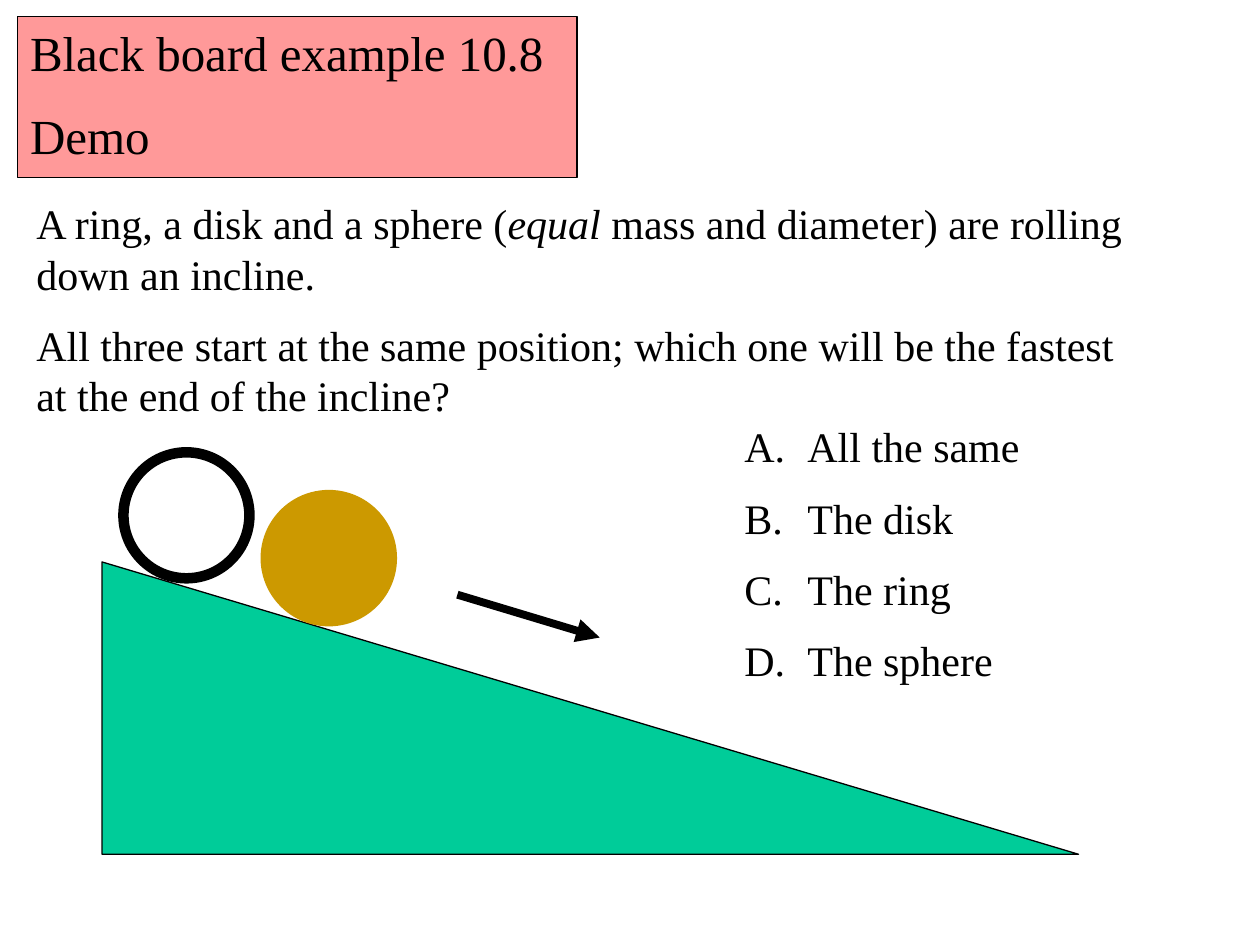
from lxml import etree
from pptx import Presentation
from pptx import util as u
from pptx.dml.color import RGBColor
from pptx.enum import shapes, text
from pptx.oxml.ns import qn

THEME = {
    "font": "Times New Roman",
    "title_size": 28,
    "body_size": 24,
    "ink": RGBColor.from_string("000000"),
    "banner": RGBColor.from_string("FF9999"),
    "incline": RGBColor.from_string("00CC99"),
    "disk": RGBColor.from_string("CC9900"),
}

deck = Presentation()
deck.slide_width, deck.slide_height = u.Inches(10), u.Inches(7.5)
slide = deck.slides.add_slide(deck.slide_layouts[6])

# The slide is a grid of 100 columns by 75 rows of square cells.
CELL = deck.slide_width / 100


def grid(*cells):
    """Turn columns and rows into slide lengths."""
    return [round(cell * CELL) for cell in cells]


def write(frame, lines, size, lettered=False):
    """Fill a frame; each line is a list of (words, italic) runs."""
    frame.word_wrap = True
    frame.auto_size = text.MSO_AUTO_SIZE.SHAPE_TO_FIT_TEXT
    for index, runs in enumerate(lines):
        line = frame.paragraphs[0] if index == 0 else frame.add_paragraph()
        line.alignment = text.PP_ALIGN.LEFT
        if index:
            line.space_before = u.Pt(size / 2)
        if lettered:
            props = line._p.get_or_add_pPr()
            indent = u.Inches(0.5)
            props.set("marL", str(indent))
            props.set("indent", str(-indent))
            etree.SubElement(props, qn("a:buFont"), typeface="+mj-lt")
            etree.SubElement(props, qn("a:buAutoNum"), type="alphaUcPeriod")
        line.font.name = THEME["font"]
        line.font.size = u.Pt(size)
        line.font.color.rgb = THEME["ink"]
        for words, italic in runs:
            run = line.add_run()
            run.text = words
            if italic:
                run.font.italic = True


question = slide.shapes.add_textbox(*grid(1.9, 15.2, 90.2, 19.2))
write(question.text_frame, [
    [("A ring, a disk and a sphere (", False), ("equal ", True),
     ("mass and diameter) are rolling down an incline.", False)],
    [("All three start at the same position; which one will be the fastest "
      "at the end of the incline?", False)],
], THEME["body_size"])

KIND = shapes.MSO_SHAPE
bodies = [
    (KIND.RIGHT_TRIANGLE, (8.1, 44.6, 77.5, 23.2), "incline", "ink", 0.75),
    (KIND.OVAL, (9.8, 35.9, 10, 10), None, "ink", 6),
    (KIND.OVAL, (21.1, 39.3, 10, 10), "disk", "disk", 6),
    (KIND.RECTANGLE, (1.4, 1.3, 44.4, 12.8), "banner", "ink", 0.75),
]
for kind, cells, fill, edge, weight in bodies:
    body = slide.shapes.add_shape(kind, *grid(*cells))
    body.shadow.inherit = False
    if fill:
        body.fill.solid()
        body.fill.fore_color.rgb = THEME[fill]
    else:
        body.fill.background()
    body.line.color.rgb = THEME[edge]
    body.line.width = u.Pt(weight)

banner = body
banner.text_frame.vertical_anchor = text.MSO_ANCHOR.TOP
write(banner.text_frame,
      [[("Black board example 10.8", False)], [("Demo", False)]],
      THEME["title_size"])

direction = slide.shapes.add_connector(
    shapes.MSO_CONNECTOR.STRAIGHT, *grid(36.3, 47.2, 47.6, 50.6))
direction.line.color.rgb = THEME["ink"]
direction.line.width = u.Pt(4.5)
etree.SubElement(direction.line._get_or_add_ln(), qn("a:tailEnd"), type="triangle")
etree.SubElement(direction._element.spPr, qn("a:effectLst"))

answers = slide.shapes.add_textbox(*grid(58.1, 32.9, 36.7, 23))
choices = ["All the same", "The disk", "The ring", "The sphere"]
write(answers.text_frame, [[(choice, False)] for choice in choices],
      THEME["body_size"], lettered=True)

deck.save("out.pptx")
